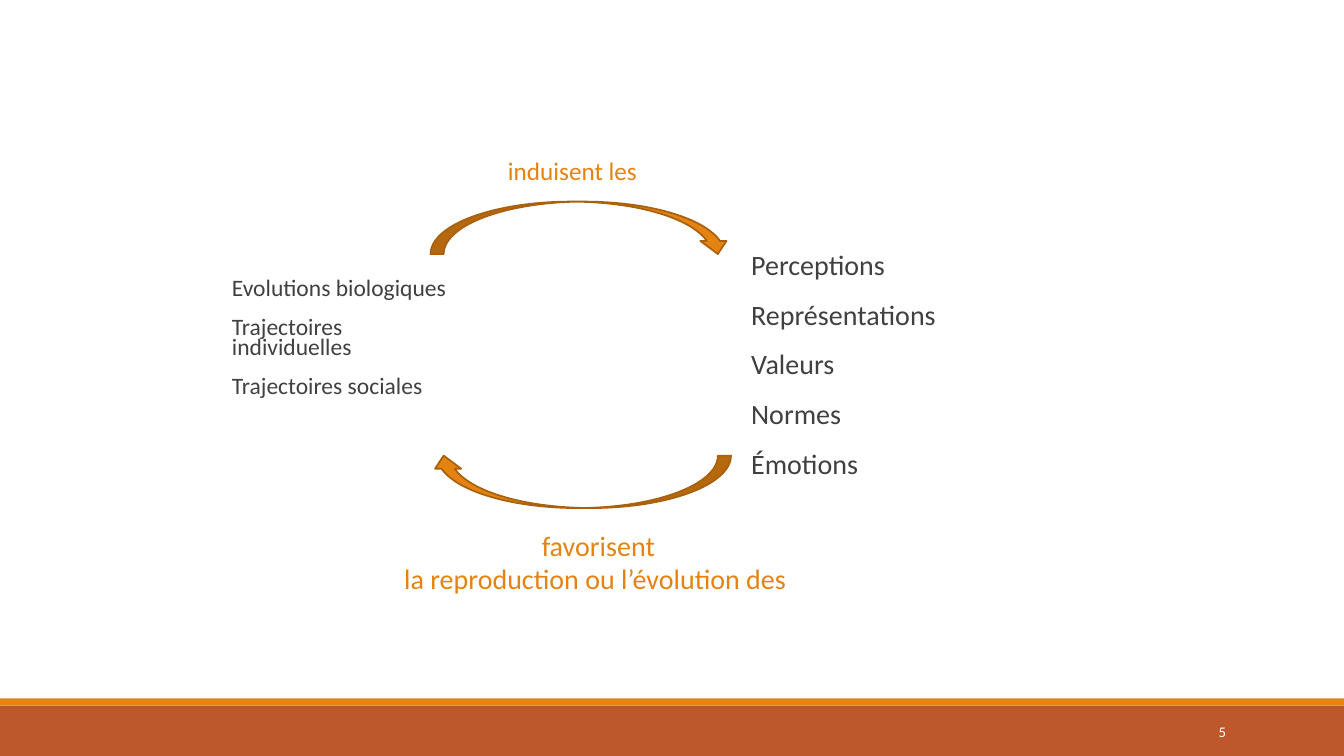
from dataclasses import dataclass

from lxml import etree
from pptx import Presentation
from pptx import util as u
from pptx.dml.color import RGBColor
from pptx.enum import shapes, text
from pptx.oxml import ns

COLORS = {
    "orange": "E48312",
    "rust": "BD582C",
    "outline": "A9610D",
    "ink": "404040",
    "white": "FFFFFF",
}
FONT = "Calibri"
TWO_CONTENT_LAYOUT = 3


@dataclass(frozen=True)
class Area:
    left: float
    top: float
    width: float
    height: float

    def lengths(self) -> tuple:
        return tuple(u.Inches(n) for n in (self.left, self.top, self.width, self.height))


@dataclass(frozen=True)
class TextBlock:
    area: Area
    lines: tuple
    size: float
    color: str
    align: text.PP_ALIGN = text.PP_ALIGN.LEFT
    anchor: text.MSO_ANCHOR = text.MSO_ANCHOR.TOP
    line_spacing: float = 1.0
    before: float = 0
    after: float = 0
    side_inset: float = 0.1
    indented: bool = False


@dataclass(frozen=True)
class Block:
    kind: shapes.MSO_SHAPE
    area: Area
    fill: str
    outline: str = ""
    rotation: float = 0


BLOCKS = (
    Block(shapes.MSO_SHAPE.RECTANGLE, Area(0, 7, 13.33, 0.5), "rust"),
    Block(shapes.MSO_SHAPE.RECTANGLE, Area(0, 6.93, 13.33, 0.07), "orange"),
    Block(shapes.MSO_SHAPE.CURVED_LEFT_ARROW, Area(5.5, 0.77, 0.52, 2.98),
          "orange", "outline", 270),
    Block(shapes.MSO_SHAPE.CURVED_LEFT_ARROW, Area(5.5, 3.29, 0.52, 2.98),
          "orange", "outline", 90),
)

LISTS = (
    TextBlock(Area(2.2, 2.73, 2.36, 1.58),
              ("Evolutions biologiques", "Trajectoires individuelles", "Trajectoires sociales"),
              16.8, "ink", line_spacing=0.7, before=12, after=2, side_inset=0, indented=True),
    TextBlock(Area(7.35, 2.44, 2.09, 2.54),
              ("Perceptions", "Représentations", "Valeurs", "Normes", "Émotions"),
              20, "ink", line_spacing=0.9, before=12, after=2, side_inset=0, indented=True),
)

LABELS = (
    TextBlock(Area(4.94, 1.49, 1.64, 0.71), ("induisent les",), 18, "orange"),
    TextBlock(Area(3.55, 5.19, 4.67, 0.99),
              ("favorisent", "la reproduction ou l’évolution des "),
              20, "orange", text.PP_ALIGN.CENTER, side_inset=0, indented=True),
    TextBlock(Area(10.83, 7.06, 1.43, 0.4), ("5",), 10.5, "white",
              text.PP_ALIGN.RIGHT, text.MSO_ANCHOR.MIDDLE),
)


def rgb(name: str) -> RGBColor:
    return RGBColor.from_string(COLORS[name])


def add_blank_bullet(para) -> None:
    """Give the paragraph a hanging indent led by an invisible bullet."""
    props = para._p.get_or_add_pPr()
    props.set("marL", str(u.Inches(0.1)))
    props.set("indent", str(-u.Inches(0.1)))
    color = etree.SubElement(props, ns.qn("a:buClr"))
    etree.SubElement(color, ns.qn("a:srgbClr"), val=COLORS["orange"])
    etree.SubElement(props, ns.qn("a:buFont"), typeface=FONT)
    etree.SubElement(props, ns.qn("a:buChar"), char=" ")


def write_text(box, block: TextBlock) -> None:
    box.left, box.top, box.width, box.height = block.area.lengths()
    frame = box.text_frame
    frame.word_wrap = True
    frame.auto_size = text.MSO_AUTO_SIZE.NONE
    frame.vertical_anchor = block.anchor
    frame.margin_left = frame.margin_right = u.Inches(block.side_inset)
    frame.margin_top = frame.margin_bottom = u.Inches(0.05)
    for index, line in enumerate(block.lines):
        para = frame.add_paragraph() if index else frame.paragraphs[0]
        para.alignment = block.align
        para.line_spacing = block.line_spacing
        para.space_before = u.Pt(block.before)
        para.space_after = u.Pt(block.after)
        if block.indented:
            add_blank_bullet(para)
        span = para.add_run()
        span.text = line
        span.font.name = FONT
        span.font.size = u.Pt(block.size)
        span.font.color.rgb = rgb(block.color)


def draw_block(page, block: Block) -> None:
    shape = page.shapes.add_shape(block.kind, *block.area.lengths())
    shape.shadow.inherit = False
    shape.rotation = block.rotation
    shape.fill.solid()
    shape.fill.fore_color.rgb = rgb(block.fill)
    if block.outline:
        shape.line.color.rgb = rgb(block.outline)
        shape.line.width = u.Pt(1.25)
    else:
        shape.line.fill.background()


def main() -> None:
    deck = Presentation()
    deck.slide_width, deck.slide_height = u.Inches(13.33), u.Inches(7.5)
    page = deck.slides.add_slide(deck.slide_layouts[TWO_CONTENT_LAYOUT])
    title = page.shapes.title.element
    title.getparent().remove(title)

    for box, block in zip(page.placeholders, LISTS):
        write_text(box, block)
    for block in BLOCKS:
        draw_block(page, block)
    for label in LABELS:
        write_text(page.shapes.add_textbox(*label.area.lengths()), label)
    deck.save("out.pptx")


if __name__ == "__main__":
    main()
